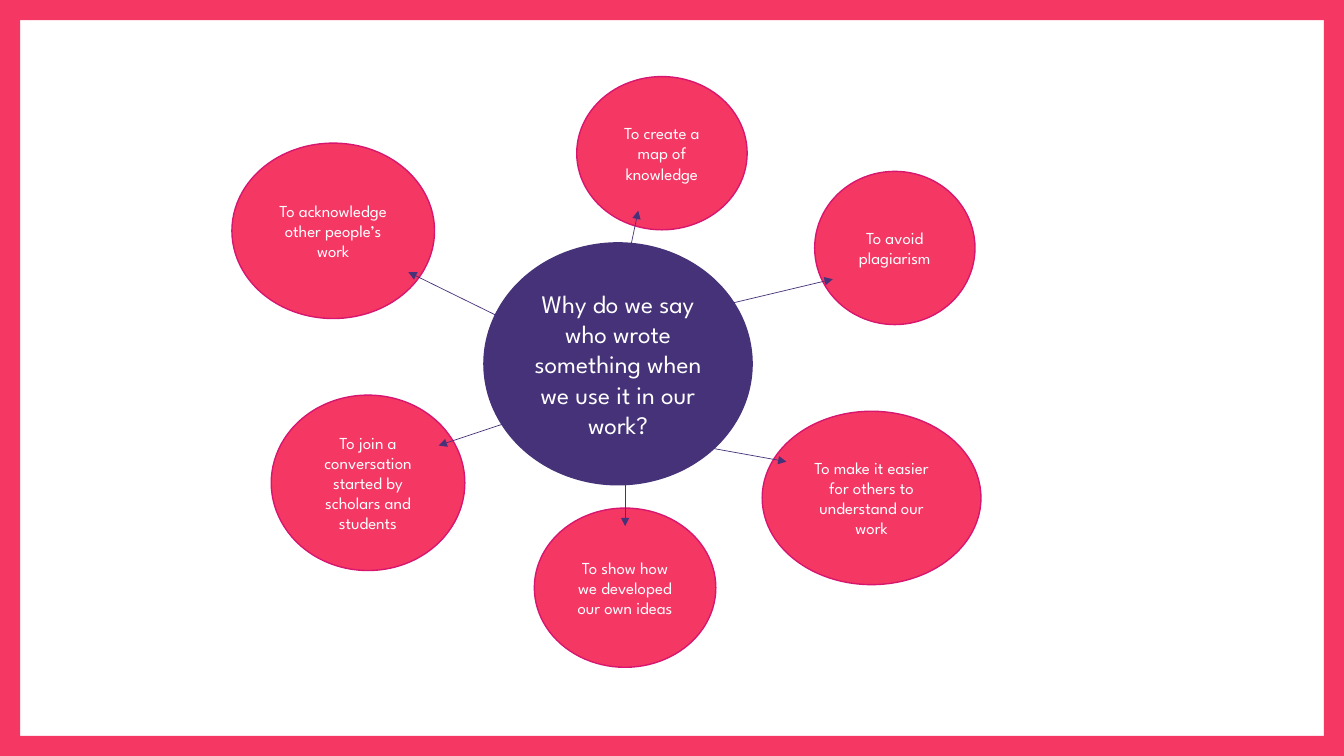
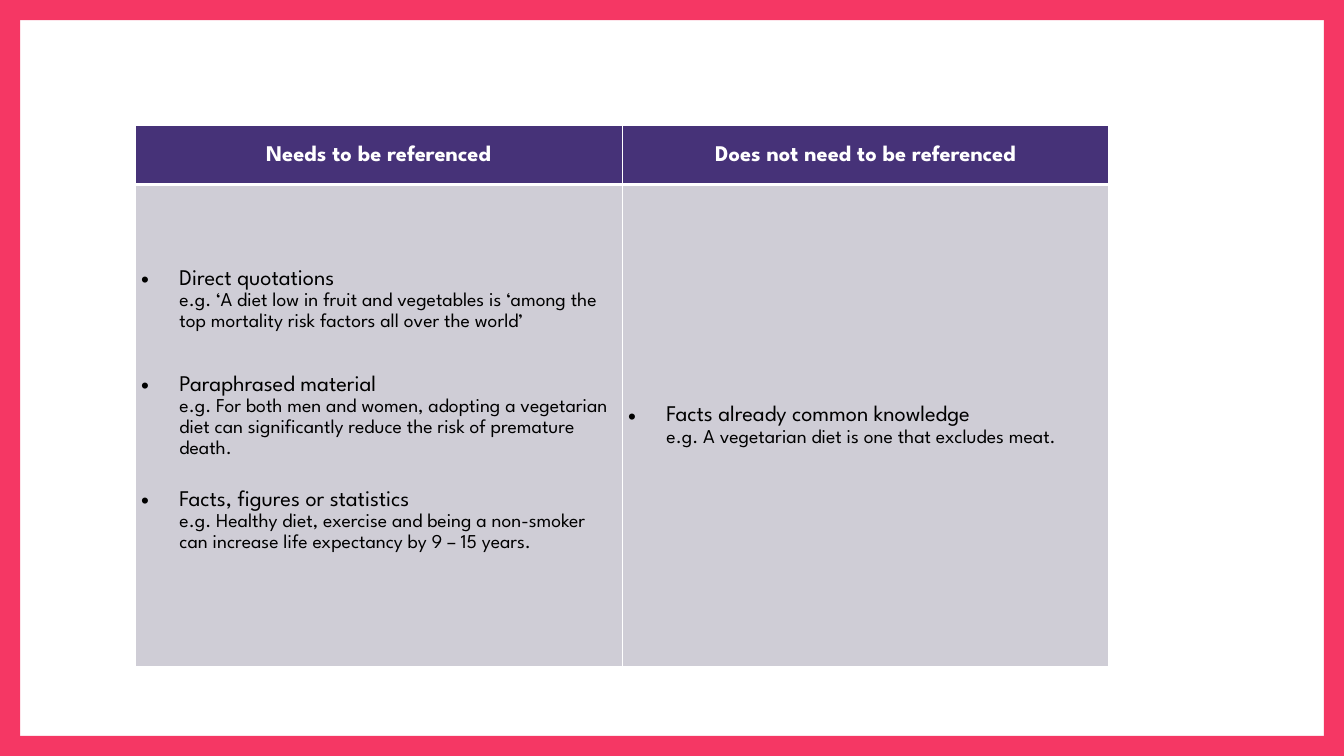
from lxml import etree
from pptx import Presentation
from pptx.dml.color import RGBColor
from pptx.enum.shapes import MSO_CONNECTOR as CONNECTOR, MSO_SHAPE as SHAPE
from pptx.enum.text import MSO_ANCHOR as ANCHOR, PP_ALIGN as ALIGN
from pptx.oxml.ns import qn
from pptx.util import Pt

PX = 9144  # EMU per px, 100 px to the inch
SLIDE_W, SLIDE_H, BAR = 1333, 750, 20
FONT = "League Spartan"
PINK = RGBColor(0xF5, 0x37, 0x64)
MAGENTA = RGBColor(0xD7, 0x17, 0x6F)
PURPLE = RGBColor(0x46, 0x32, 0x78)
GREY = RGBColor(0xCF, 0xCD, 0xD6)
WHITE = RGBColor(0xFF, 0xFF, 0xFF)
BLACK = RGBColor(0, 0, 0)

QUESTION = "Why do we say who wrote something when we use it in our work?"
# Reason, bubble box, arrow start, arrow end
REASONS = [
    ("To acknowledge other people’s work", (230, 142, 201, 174), (523, 328), (405, 270)),
    ("To join a conversation started by scholars and students",
     (269, 392, 192, 174), (534, 409), (435, 442)),
    ("To create a map of knowledge", (572, 76, 169, 152), (616, 290), (633, 209)),
    ("To avoid plagiarism", (808, 170, 159, 152), (540, 345), (826, 277)),
    ("To show how we developed our own ideas", (530, 504, 180, 158), (620, 458), (620, 522)),
    ("To make it easier for others to understand our work",
     (756, 408, 217, 172), (691, 442), (780, 458)),
]

# Column heading, bottom inset of the body, items of (space before, title, example)
COLUMNS = [
    ("Needs to be referenced", 36, [
        (0, "Direct quotations",
         "e.g. ‘A diet low in fruit and vegetables is ‘among the top mortality risk "
         "factors all over the world’"),
        (29, "Paraphrased material",
         "e.g. For both men and women, adopting a vegetarian diet can significantly "
         "reduce the risk of premature death."),
        (21, "Facts, figures or statistics",
         "e.g. Healthy diet, exercise and being a non-smoker can increase life "
         "expectancy by 9 – 15 years."),
    ]),
    ("Does not need to be referenced", 5, [
        (0, "Facts already common knowledge",
         "e.g. A vegetarian diet is one that excludes meat."),
    ]),
]


def px(*lengths):
    return [n * PX for n in lengths]


def add_run(p, text, size, color, bold=False):
    r = p.add_run()
    r.text = text
    r.font.name, r.font.size, r.font.bold = FONT, Pt(size), bold
    r.font.color.rgb = color


def add_shape(slide, kind, box, fill, line=None):
    s = slide.shapes.add_shape(kind, *px(*box))
    s.shadow.inherit = False
    s.fill.solid()
    s.fill.fore_color.rgb = fill
    if line is None:
        s.line.fill.background()
    else:
        s.line.color.rgb = line
        s.line.width = Pt(1)
    return s


def add_bubble(slide, text, box, fill, line, size):
    tf = add_shape(slide, SHAPE.OVAL, box, fill, line).text_frame
    tf.word_wrap = True
    tf.vertical_anchor = ANCHOR.MIDDLE
    p = tf.paragraphs[0]
    p.alignment = ALIGN.CENTER
    add_run(p, text, size, WHITE)


def add_arrow(slide, start, end):
    c = slide.shapes.add_connector(CONNECTOR.STRAIGHT, *px(*start, *end))
    c.line.color.rgb = PURPLE
    c.line.width = Pt(0.5)
    etree.SubElement(c.line._get_or_add_ln(), qn("a:tailEnd"), type="triangle")
    etree.SubElement(c.element.spPr, qn("a:effectLst"))


def set_borders(cell, **widths):
    """Draw white borders; they come before the fill in the cell properties."""
    tcPr = cell._tc.get_or_add_tcPr()
    for i, side in enumerate(("lnL", "lnR", "lnT", "lnB")):
        ln = etree.Element(qn("a:" + side), w=str(Pt(widths.get(side, 1))))
        fill = etree.SubElement(ln, qn("a:solidFill"))
        etree.SubElement(fill, qn("a:srgbClr"), val=str(WHITE))
        tcPr.insert(i, ln)


def style_cell(cell, fill, bottom=5, **borders):
    cell.fill.solid()
    cell.fill.fore_color.rgb = fill
    cell.vertical_anchor = ANCHOR.MIDDLE
    cell.margin_left, cell.margin_right, cell.margin_top, cell.margin_bottom = px(6, 6, 5, bottom)
    set_borders(cell, **borders)


def add_bullet(p, indent):
    pPr = p._p.get_or_add_pPr()
    pPr.set("marL", str(indent * PX))
    pPr.set("indent", str(-indent * PX))
    etree.SubElement(pPr, qn("a:buFont"), typeface="Arial")
    etree.SubElement(pPr, qn("a:buChar"), char="•")


def fill_items(tf, items):
    for i, (gap, title, example) in enumerate(items):
        p = tf.add_paragraph() if i else tf.paragraphs[0]
        add_bullet(p, 38)
        p.line_spacing = 1.15
        p.space_before = Pt(gap)
        add_run(p, title, 16, BLACK)
        p.add_line_break()
        add_run(p, example, 14, BLACK)


def add_frame(layout, slide):
    """Put the four pink bars on the layout, so that every slide shows them."""
    for ph in list(layout.placeholders):
        ph.element.getparent().remove(ph.element)
    for box in ((0, 0, BAR, SLIDE_H), (SLIDE_W - BAR, 0, BAR, SLIDE_H),
                (0, 0, SLIDE_W, BAR), (0, SLIDE_H - BAR, SLIDE_W, BAR)):
        bar = add_shape(slide, SHAPE.RECTANGLE, box, PINK)
        layout.element.cSld.spTree.append(bar.element)


def build_mind_map(slide):
    for text, box, _, _ in REASONS:
        add_bubble(slide, text, box, PINK, MAGENTA, 12)
    for _, _, start, end in REASONS:
        add_arrow(slide, start, end)
    add_bubble(slide, QUESTION, (480, 241, 266, 240), PURPLE, PURPLE, 18)


def build_comparison(slide):
    table = slide.shapes.add_table(2, len(COLUMNS), *px(134, 124, 966, 537)).table
    for row, height in zip(table.rows, px(59, 478)):
        row.height = height
    for col, (heading, bottom, items) in enumerate(COLUMNS):
        # Heading
        cell = table.cell(0, col)
        style_cell(cell, PURPLE, lnB=3)
        p = cell.text_frame.paragraphs[0]
        p.alignment = ALIGN.CENTER
        p.line_spacing = 1.15
        add_run(p, heading, 16, WHITE, bold=True)
        # Items
        cell = table.cell(1, col)
        style_cell(cell, GREY, bottom, lnT=3)
        fill_items(cell.text_frame, items)


def main():
    prs = Presentation()
    prs.slide_width, prs.slide_height = px(SLIDE_W, SLIDE_H)
    layout = prs.slide_layouts[6]
    mind_map, comparison = (prs.slides.add_slide(layout) for _ in range(2))
    add_frame(layout, mind_map)
    build_mind_map(mind_map)
    build_comparison(comparison)
    prs.save("out.pptx")


if __name__ == "__main__":
    main()
